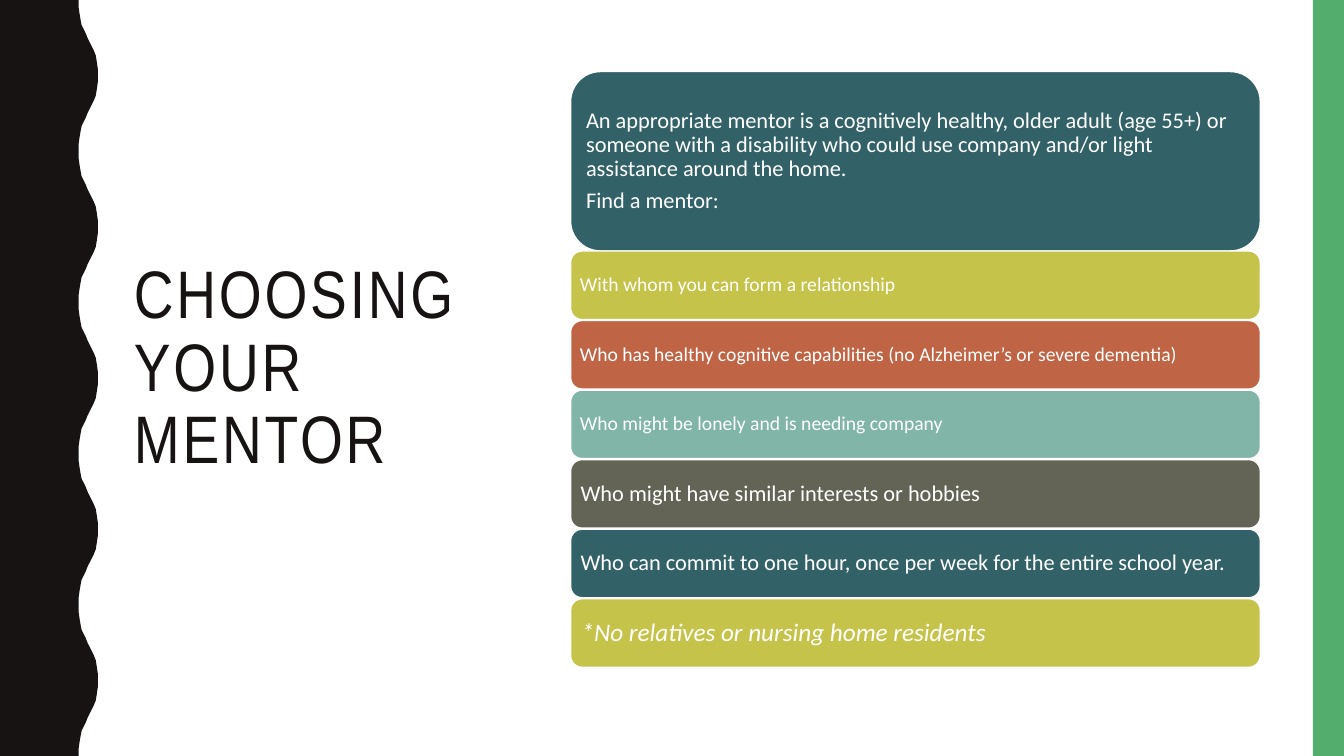
from dataclasses import dataclass

from pptx import Presentation
from pptx.dml.color import RGBColor
from pptx.enum.shapes import MSO_SHAPE
from pptx.enum.text import MSO_ANCHOR, PP_ALIGN
from pptx.util import Inches, Pt


@dataclass(frozen=True)
class Theme:
    ink: str = "171312"
    white: str = "FFFFFF"
    green: str = "53AE6E"
    teal: str = "326267"
    olive: str = "C5C34A"
    rust: str = "BF6546"
    sage: str = "81B5A8"
    stone: str = "636455"
    title_font: str = "Arial Narrow"
    body_font: str = "Calibri"
    title_size: int = 48
    small: int = 14
    medium: int = 16
    large: int = 18


THEME = Theme()

TITLE = "CHOOSING YOUR MENTOR"
INTRO = [
    "An appropriate mentor is a cognitively healthy, older adult (age 55+) or "
    "someone with a disability who could use company and/or light assistance "
    "around the home.",
    "Find a mentor:",
]
# text, fill, size, italic
CRITERIA = [
    ("With whom you can form a relationship", THEME.olive, THEME.small, False),
    ("Who has healthy cognitive capabilities (no Alzheimer’s or severe dementia)",
     THEME.rust, THEME.small, False),
    ("Who might be lonely and is needing company", THEME.sage, THEME.small, False),
    ("Who might have similar interests or hobbies", THEME.stone, THEME.medium, False),
    ("Who can commit to one hour, once per week for the entire school year.",
     THEME.teal, THEME.medium, False),
    ("*No relatives or nursing home residents", THEME.olive, THEME.large, True),
]

SLIDE_W, SLIDE_H = 13.33, 7.5
STRIPE_W = 0.31
CONTENT_TOP, CONTENT_H = 0.71, 5.91
TITLE_LEFT, TITLE_W = 1.23, 4.23
CARD_LEFT, CARD_W = 5.66, 6.84
INTRO_H, ROW_H, ROW_PITCH = 1.78, 0.68, 0.69
LINE_SPACING = 0.9

# Half a wave: (distance down, distance out from the trough)
WAVE_LEFT, WAVE_COUNT = 0.78, 5
HALF_WAVE = [
    (0, 0), (0.07, 0), (0.14, 0.01), (0.2, 0.02), (0.25, 0.03),
    (0.29, 0.05), (0.33, 0.07), (0.38, 0.09), (0.42, 0.11), (0.46, 0.13),
    (0.5, 0.15), (0.55, 0.17), (0.61, 0.18), (0.68, 0.19), (0.75, 0.19),
]


def paint(shape, fill, outline=None):
    shape.shadow.inherit = False
    shape.fill.solid()
    shape.fill.fore_color.rgb = RGBColor.from_string(fill)
    if outline:
        shape.line.color.rgb = RGBColor.from_string(outline)
        shape.line.width = Pt(1)
    else:
        shape.line.fill.background()


def write(frame, lines, font_name, size, color, italic=False, space_after=0):
    frame.word_wrap = True
    frame.vertical_anchor = MSO_ANCHOR.MIDDLE
    for index, line in enumerate(lines):
        paragraph = frame.add_paragraph() if index else frame.paragraphs[0]
        paragraph.alignment = PP_ALIGN.LEFT
        paragraph.line_spacing = LINE_SPACING
        paragraph.space_after = Pt(space_after)
        run = paragraph.add_run()
        run.text = line
        run.font.name = font_name
        run.font.size = Pt(size)
        run.font.italic = italic
        run.font.color.rgb = RGBColor.from_string(color)


def add_wavy_edge(shapes):
    period = SLIDE_H / WAVE_COUNT
    wave = HALF_WAVE + [(period - down, out) for down, out in HALF_WAVE[-2::-1]]
    edge = [
        (Inches(WAVE_LEFT + out), Inches(number * period + down))
        for number in range(WAVE_COUNT)
        for down, out in wave
    ]
    builder = shapes.build_freeform(0, 0)
    builder.add_line_segments(edge + [(0, Inches(SLIDE_H))], close=True)
    paint(builder.convert_to_shape(), THEME.ink)


def add_stripe(shapes):
    stripe = shapes.add_shape(
        MSO_SHAPE.RECTANGLE, Inches(SLIDE_W - STRIPE_W), 0,
        Inches(STRIPE_W), Inches(SLIDE_H))
    paint(stripe, THEME.green)


def add_title(shapes):
    title = shapes.add_textbox(
        Inches(TITLE_LEFT), Inches(CONTENT_TOP), Inches(TITLE_W), Inches(CONTENT_H))
    write(title.text_frame, [TITLE], THEME.title_font, THEME.title_size, THEME.ink)
    run = title.text_frame.paragraphs[0].runs[0]
    run.font._element.set("spc", "200")


def add_card(shapes, top, height, lines, fill, size, italic=False):
    card = shapes.add_shape(
        MSO_SHAPE.ROUNDED_RECTANGLE, Inches(CARD_LEFT), Inches(top),
        Inches(CARD_W), Inches(height))
    paint(card, fill, THEME.white)
    frame = card.text_frame
    inset = Pt(size * 0.3)
    frame.margin_left = frame.margin_right = inset
    frame.margin_top = frame.margin_bottom = inset
    write(frame, lines, THEME.body_font, size, THEME.white, italic, size * 0.35)


def main():
    deck = Presentation()
    deck.slide_width, deck.slide_height = Inches(SLIDE_W), Inches(SLIDE_H)
    shapes = deck.slides.add_slide(deck.slide_layouts[6]).shapes
    add_wavy_edge(shapes)
    add_stripe(shapes)
    add_title(shapes)
    add_card(shapes, CONTENT_TOP, INTRO_H, INTRO, THEME.teal, THEME.medium)
    for row, (text, fill, size, italic) in enumerate(CRITERIA):
        top = CONTENT_TOP + INTRO_H + row * ROW_PITCH
        add_card(shapes, top, ROW_H, [text], fill, size, italic)
    deck.save("out.pptx")


if __name__ == "__main__":
    main()
